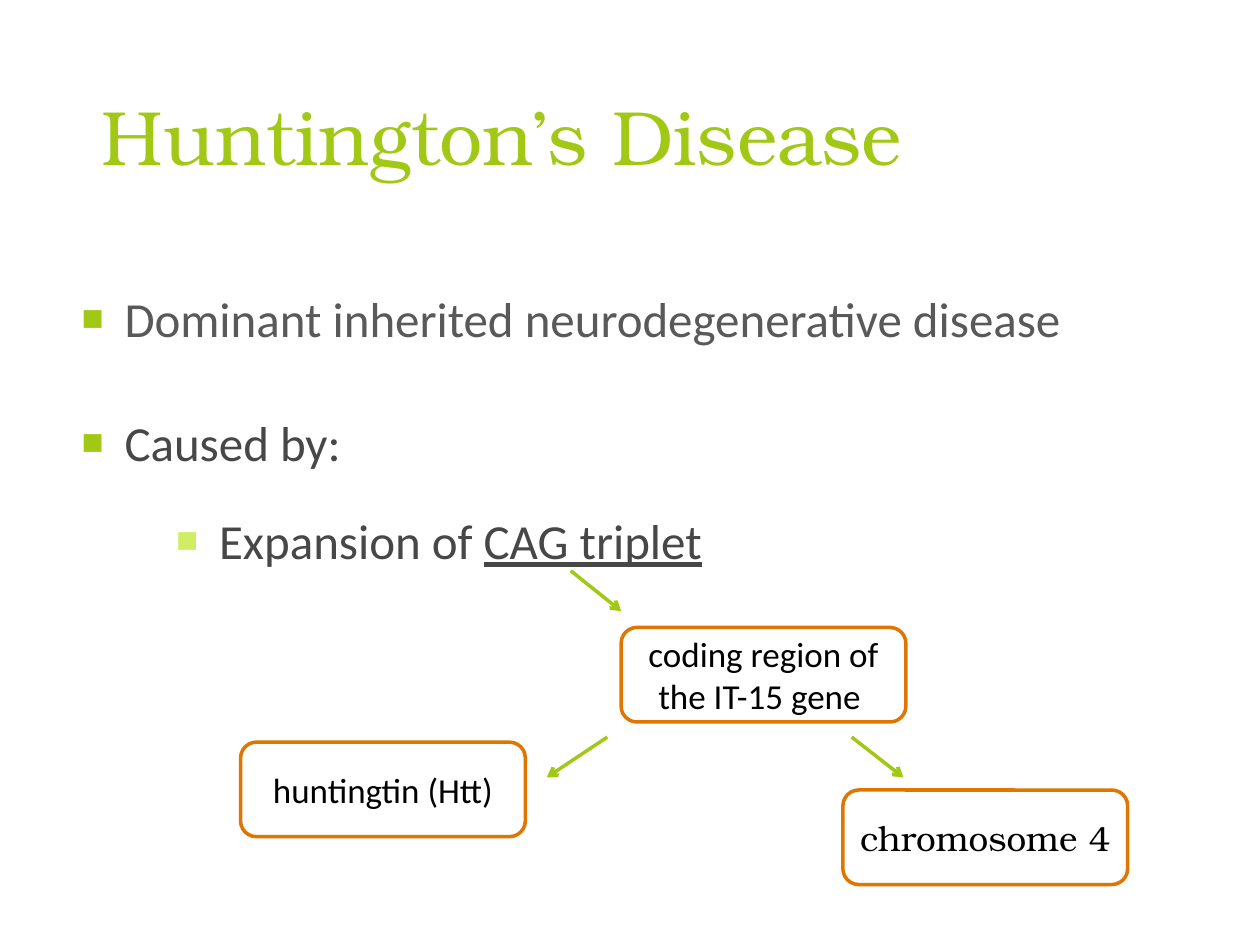
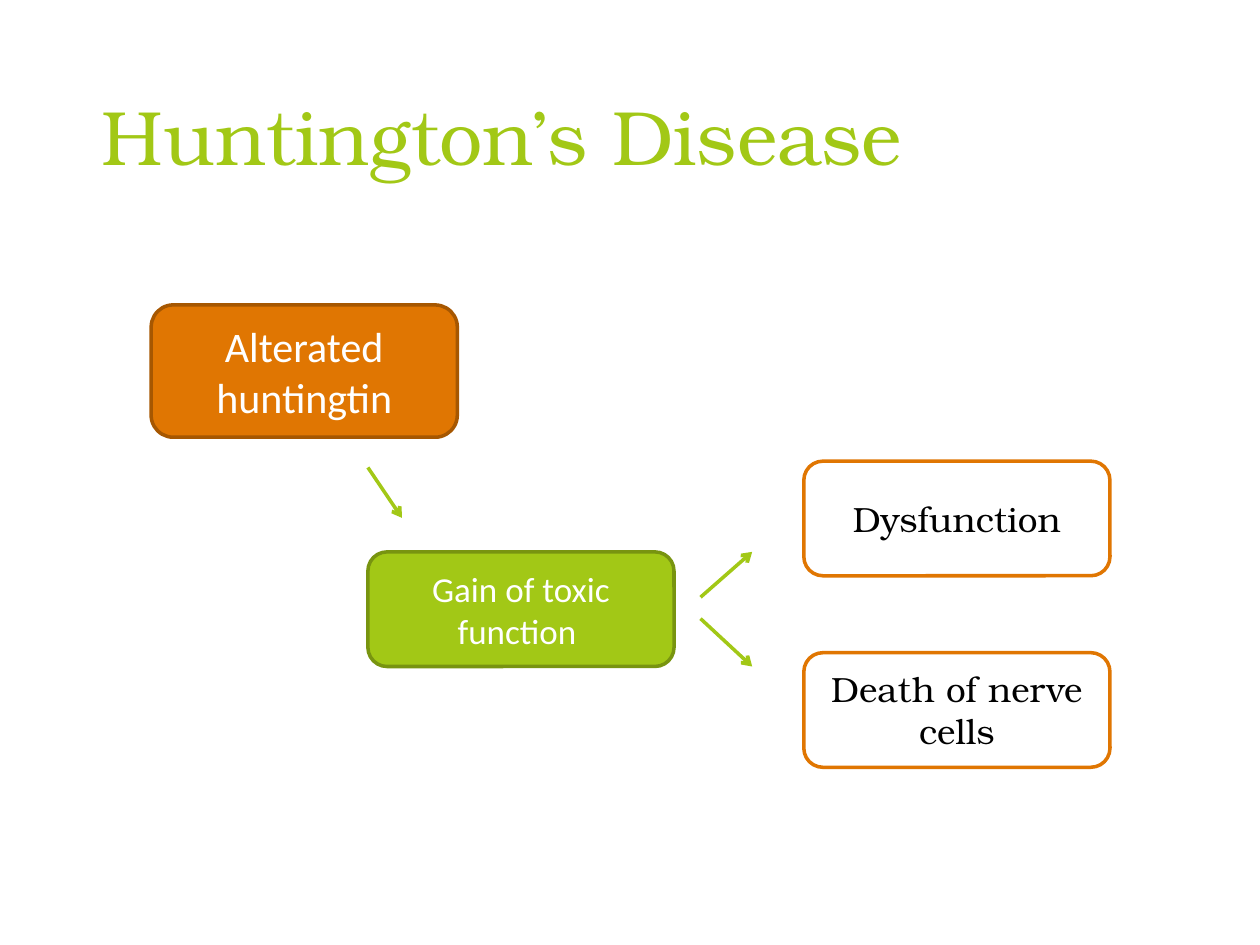
"""Build two slides on the cause and effects of Huntington’s Disease."""
from dataclasses import dataclass

from lxml.etree import SubElement
from pptx import Presentation
from pptx.dml.color import RGBColor
from pptx.enum.shapes import MSO_CONNECTOR, MSO_SHAPE
from pptx.enum.text import MSO_ANCHOR, PP_ALIGN
from pptx.oxml.ns import qn
from pptx.util import Inches, Pt


@dataclass(frozen=True)
class Theme:
    green: RGBColor = RGBColor.from_string("A2C816")
    dark_green: RGBColor = RGBColor.from_string("789410")
    pale_green: RGBColor = RGBColor.from_string("D0EE63")
    orange: RGBColor = RGBColor.from_string("E07602")
    dark_orange: RGBColor = RGBColor.from_string("A65701")
    gray: RGBColor = RGBColor.from_string("595959")
    dark_gray: RGBColor = RGBColor.from_string("474747")
    white: RGBColor = RGBColor.from_string("FFFFFF")
    black: RGBColor = RGBColor.from_string("000000")
    serif: str = "TeX Gyre Bonum"
    sans: str = "Calibri"
    title_size: Pt = Pt(44)
    body_size: Pt = Pt(28)
    lead_size: Pt = Pt(24)
    box_size: Pt = Pt(20)
    line_width: Pt = Pt(2)


theme = Theme()


def set_font(paragraph, face, size, color):
    paragraph.font.name = face
    paragraph.font.size = size
    paragraph.font.color.rgb = color


prs = Presentation()
prs.slide_width, prs.slide_height = Inches(10), Inches(7.5)
cause_slide, effect_slide = [prs.slides.add_slide(prs.slide_layouts[6]) for _ in range(2)]

for slide in (cause_slide, effect_slide):
    title = slide.shapes.add_textbox(Inches(0.71), Inches(0.65), Inches(8.26), Inches(1.22)).text_frame
    title.word_wrap = True
    title.text = "Huntington’s Disease"
    set_font(title.paragraphs[0], theme.serif, theme.title_size, theme.green)

points = [
    ("Dominant inherited neurodegenerative disease", "", 0, 0.34, 20, theme.gray, theme.green),
    ("Caused by:", "", 0, 0.34, 20, theme.dark_gray, theme.green),
    ("Expansion of ", "CAG triplet", 3, 1.09, 6, theme.dark_gray, theme.pale_green),
]
body = cause_slide.shapes.add_textbox(Inches(0.55), Inches(2.01), Inches(9.05), Inches(4.53)).text_frame
body.word_wrap = True
for index, (wording, underlined, level, margin, space, color, bullet_color) in enumerate(points):
    point = body.add_paragraph() if index else body.paragraphs[0]
    point.add_run().text = wording
    if underlined:
        term = point.add_run()
        term.text = underlined
        term.font.underline = True
    point.level = level
    point.line_spacing = 1.5
    point.space_before = Pt(space)
    set_font(point, theme.sans, theme.body_size, color)
    properties = point._p.get_or_add_pPr()
    properties.set("marL", str(Inches(margin)))
    properties.set("indent", str(Inches(-0.34)))
    bullet = [
        ("a:buClr", {}),
        ("a:buSzPct", {"val": "75000"}),
        ("a:buFont", {"typeface": "Arial"}),
        ("a:buChar", {"char": "■"}),
    ]
    for position, (tag, attributes) in enumerate(bullet):
        mark = SubElement(properties, qn(tag), attributes)
        if tag == "a:buClr":
            SubElement(mark, qn("a:srgbClr"), val=str(bullet_color))
        properties.insert(2 + position, mark)

plain = (theme.white, theme.orange, theme.black)
cause_size = (2.26, 0.75)
effect_size = (2.43, 0.91)
boxes = [
    (cause_slide, "coding region of the IT-15 gene ", (4.93, 4.98), cause_size, plain, theme.sans, theme.box_size),
    (cause_slide, "chromosome 4", (6.69, 6.27), cause_size, plain, theme.serif, theme.box_size),
    (cause_slide, "huntingtin (Htt)", (1.91, 5.89), cause_size, plain, theme.sans, theme.box_size),
    (effect_slide, "Alterated huntingtin", (1.2, 2.42), (2.43, 1.05),
     (theme.orange, theme.dark_orange, theme.white), theme.sans, theme.lead_size),
    (effect_slide, "Gain of toxic function ", (2.92, 4.38), effect_size,
     (theme.green, theme.dark_green, theme.white), theme.sans, theme.box_size),
    (effect_slide, "Dysfunction", (6.38, 3.66), effect_size, plain, theme.serif, theme.box_size),
    (effect_slide, "Death of nerve cells", (6.38, 5.18), effect_size, plain, theme.serif, theme.box_size),
]
for slide, wording, corner, size, (fill, outline, ink), face, text_size in boxes:
    box = slide.shapes.add_shape(MSO_SHAPE.ROUNDED_RECTANGLE, *map(Inches, corner + size))
    box.shadow.inherit = False
    box.fill.solid()
    box.fill.fore_color.rgb = fill
    box.line.color.rgb = outline
    box.line.width = theme.line_width
    label = box.text_frame
    label.word_wrap = True
    label.vertical_anchor = MSO_ANCHOR.MIDDLE
    label.text = wording
    label.paragraphs[0].alignment = PP_ALIGN.CENTER
    set_font(label.paragraphs[0], face, text_size, ink)

arrows = [
    (cause_slide, 4.53, 4.53, 4.93, 4.85),
    (cause_slide, 6.76, 5.85, 7.17, 6.17),
    (cause_slide, 4.82, 5.85, 4.34, 6.17),
    (effect_slide, 2.92, 3.71, 3.19, 4.11),
    (effect_slide, 5.56, 4.74, 5.97, 4.38),
    (effect_slide, 5.56, 4.91, 5.97, 5.29),
]
for slide, *ends in arrows:
    arrow = slide.shapes.add_connector(MSO_CONNECTOR.STRAIGHT, *map(Inches, ends))
    arrow.line.color.rgb = theme.green
    arrow.line.width = theme.line_width
    SubElement(arrow.line._get_or_add_ln(), qn("a:tailEnd"), type="arrow")
    SubElement(arrow._element.spPr, qn("a:effectLst"))

prs.save("out.pptx")
